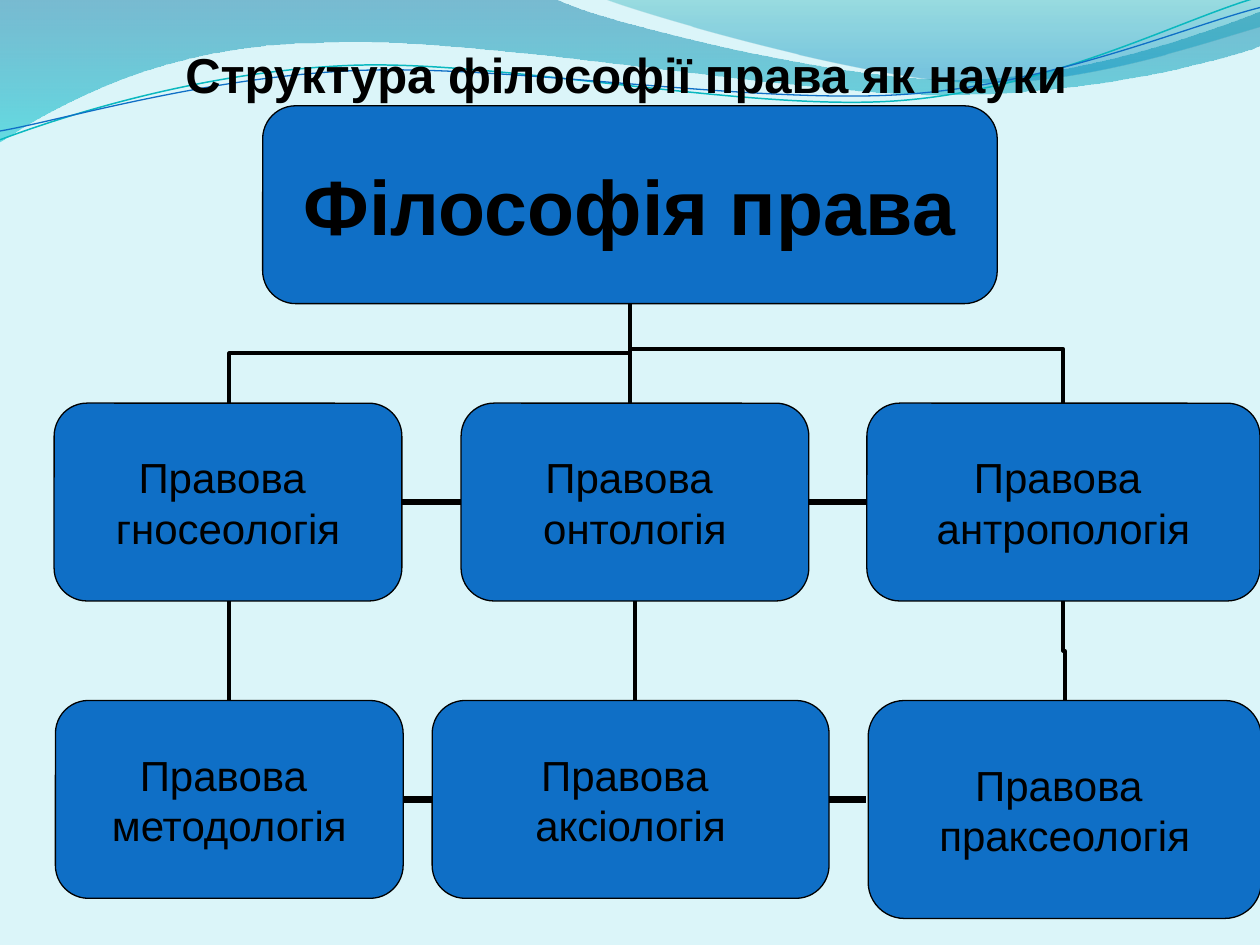
from lxml.etree import SubElement
from pptx import Presentation
from pptx.dml.color import RGBColor
from pptx.enum.shapes import MSO_CONNECTOR, MSO_SHAPE
from pptx.enum.text import MSO_ANCHOR, MSO_AUTO_SIZE, PP_ALIGN
from pptx.oxml.ns import qn
from pptx.util import Inches, Pt


def rgb(value):
    return RGBColor.from_string(value)


def connect(kind, x1, y1, x2, y2, width):
    c = s.shapes.add_connector(kind, Inches(x1), Inches(y1), Inches(x2), Inches(y2))
    c.line.color.rgb = rgb("000000")
    c.line.width = Pt(width)
    SubElement(c.element.spPr, qn("a:effectLst"))
    return c


prs = Presentation()
prs.slide_width, prs.slide_height = Inches(10), Inches(7.5)
s = prs.slides.add_slide(prs.slide_layouts[5])
s.background.fill.solid()
s.background.fill.fore_color.rgb = rgb("DBF5F9")

waves = [
    ((0, -0.01),
     [(4.4, -0.01), (4.76, 0.17, 6.64, 0.63, 7.58, 0.63),
      (8.53, 0.63, 9.58, 0.26, 10, 0.09), (10.01, 0.36),
      (9.83, 0.44, 8.7, 0.76, 7.46, 0.75), (6.22, 0.75, 3.82, 0.28, 2.57, 0.34),
      (1.29, 0.35, 0.46, 0.83, -0.01, 1.13), (0, -0.01)],
     [(0, "0074A1", 45), (1, "00C6CF", 55)], None),
    ((4.79, -0.01),
     [(5.09, 0.11, 6.82, 0.62, 7.69, 0.65), (8.56, 0.69, 9.61, 0.32, 10, 0.21),
      (10, 0), (4.79, -0.01)],
     [(0, "00A1A9", 30), (0.8, "008BBF", 45)], None),
    ((0, 1.11),
     [(0.48, 0.93, 1.58, 0.57, 2.77, 0.52), (3.95, 0.47, 5.93, 0.89, 7.13, 0.8),
      (8.33, 0.71, 9.38, 0.15, 9.98, -0.02)],
     None, ("0AB8BF", 0.85)),
    ((0, 1.04),
     [(0.47, 0.96, 1.64, 0.61, 2.83, 0.56), (4.03, 0.51, 5.97, 0.83, 7.17, 0.75),
      (8.36, 0.67, 9.41, 0.21, 10, 0.06)],
     None, ("0F6FC6", 0.75)),
]
for start, segments, stops, line in waves:
    points = [(Inches(x), Inches(y)) for seg in segments for x, y in zip(seg[::2], seg[1::2])]
    fb = s.shapes.build_freeform(Inches(start[0]), Inches(start[1]))
    fb.add_line_segments(points, close=stops is not None)
    sp = fb.convert_to_shape()
    sp.shadow.inherit = False
    edges = iter(list(sp.element.spPr.iter(qn("a:lnTo"))))
    for seg in segments:
        edge = next(edges)
        if len(seg) == 6:
            edge.tag = qn("a:cubicBezTo")
            for _ in range(2):
                extra = next(edges)
                edge.append(extra[0])
                extra.getparent().remove(extra)
    if stops:
        sp.line.fill.background()
        sp.fill.gradient()
        sp.fill.gradient_angle = 270
        for stop, (pos, color, alpha) in zip(sp.fill.gradient_stops, stops):
            stop.position = pos
            stop.color.rgb = rgb(color)
        for clr, (pos, color, alpha) in zip(sp.element.spPr.iter(qn("a:srgbClr")), stops):
            SubElement(clr, qn("a:alpha")).set("val", str(alpha * 1000))
    else:
        sp.fill.background()
        sp.line.color.rgb = rgb(line[0])
        sp.line.width = Pt(line[1])

title = s.shapes.title
title.element.getparent().append(title.element)
title.left, title.top, title.width, title.height = map(Inches, (0.47, 0.13, 9, 0.69))
tf = title.text_frame
tf.text = "Структура філософії права як науки"
tf.auto_size = MSO_AUTO_SIZE.NONE
tf.vertical_anchor = MSO_ANCHOR.BOTTOM
tf.margin_left = tf.margin_right = tf.margin_bottom = 0
tf.margin_top = Inches(0.05)
p = tf.paragraphs[0]
p.alignment = PP_ALIGN.CENTER
p.font.name, p.font.size, p.font.bold = "Arial", Pt(28), True
p.font.color.rgb = rgb("000000")

top_y, mid_y, low_y, box_h = 0.84, 3.2, 5.56, 1.57
root_x, drop = 5, 0.79

elbows = [
    (1.82, 1.82, low_y, 50000),
    (5.04, 5.04, low_y, 50000),
    (8.45, 8.44, low_y, 50000),
    (8.44, root_x, mid_y, 54200),
    (1.82, root_x, mid_y, 50000),
]
for child_x, parent_x, y, bend in elbows:
    cx, cy, span = (child_x + parent_x) / 2, y - drop / 2, abs(child_x - parent_x)
    x1, x2, turn = cx - drop / 2, cx + drop / 2, 270
    if child_x > parent_x:
        x1, x2, turn = x2, x1, 90
    c = connect(MSO_CONNECTOR.ELBOW, x1, cy - span / 2, x2, cy + span / 2, 2.25)
    c.element.spPr.find(qn("a:xfrm")).set("rot", str(turn * 60000))
    gd = SubElement(c.element.spPr.find(qn("a:prstGeom")).find(qn("a:avLst")), qn("a:gd"))
    gd.set("name", "adj1")
    gd.set("fmla", f"val {bend}")
trunk = connect(MSO_CONNECTOR.STRAIGHT, root_x, mid_y, root_x, top_y + box_h, 2.25)

boxes = [
    ("root", 2.085, top_y, 5.83, box_h, "Філософія права"),
    ("gnoseology", 0.43, mid_y, 2.76, box_h, "Правова \nгносеологія"),
    ("ontology", 3.66, mid_y, 2.76, box_h, "Правова \nонтологія"),
    ("anthropology", 6.88, mid_y, 3.12, box_h, "Правова \nантропологія"),
    ("praxeology", 6.89, low_y, 3.12, 1.73, "Правова \nпраксеологія"),
    ("axiology", 3.43, low_y, 3.15, box_h, "Правова \nаксіологія"),
    ("methodology", 0.44, low_y, 2.76, box_h, "Правова \nметодологія"),
]
shapes = {}
for key, x, y, w, h, text in boxes:
    sp = s.shapes.add_shape(MSO_SHAPE.ROUNDED_RECTANGLE, Inches(x), Inches(y), Inches(w), Inches(h))
    shapes[key] = sp
    sp.shadow.inherit = False
    sp.fill.solid()
    sp.fill.fore_color.rgb = rgb("0F6FC6")
    sp.line.color.rgb = rgb("000000")
    sp.line.width = Pt(0.75)
    tf = sp.text_frame
    tf.text = text
    tf.word_wrap = False
    tf.vertical_anchor = MSO_ANCHOR.MIDDLE
    tf.margin_left = tf.margin_right = tf.margin_top = tf.margin_bottom = 0
    for p in tf.paragraphs:
        p.alignment = PP_ALIGN.CENTER
        p.font.name = "Arial"
        p.font.size = Pt(44 if key == "root" else 24)
        if key == "root":
            p.font.bold = True
        p.font.color.rgb = rgb("000000")
trunk.end_connect(shapes["root"], 2)

joins = [
    ("methodology", "axiology"),
    ("gnoseology", "ontology"),
    ("ontology", "anthropology"),
]
for a, b in joins:
    c = connect(MSO_CONNECTOR.STRAIGHT, 0, 0, 1, 1, 3.75)
    c.begin_connect(shapes[a], 3)
    c.end_connect(shapes[b], 1)
low_mid = low_y + box_h / 2
c = connect(MSO_CONNECTOR.STRAIGHT, 6.58, low_mid, 6.87, low_mid, 3.75)
c.begin_connect(shapes["axiology"], 3)

prs.save("out.pptx")
